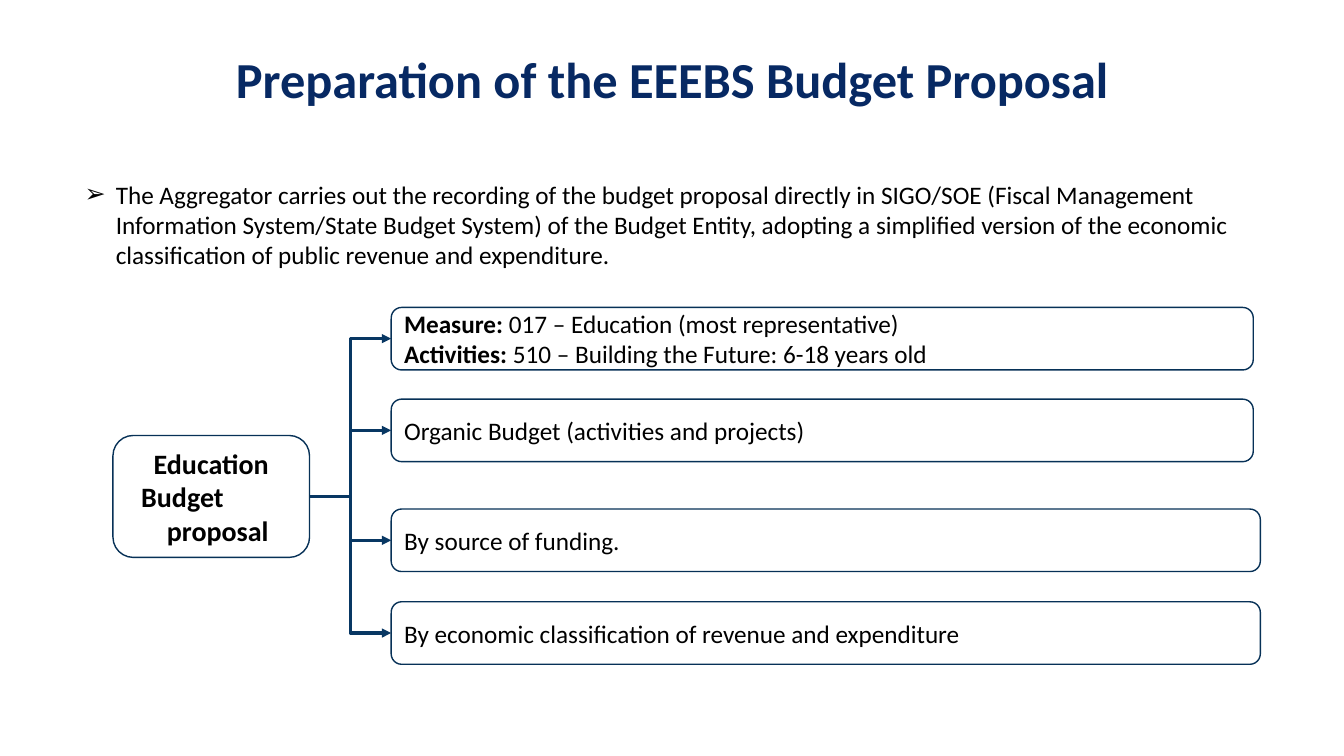
import pptx
import pptx.util
import pptx.dml.color
import pptx.enum.shapes
import pptx.enum.text
import pptx.oxml
import pptx.oxml.ns

Inches = pptx.util.Inches
ALIGN = pptx.enum.text.PP_ALIGN
ANCHOR = pptx.enum.text.MSO_ANCHOR

THEME = {
    "font": "Calibri",
    "title": {"size": 36, "color": "072963"},
    "body": {"size": 18, "color": "000000"},
    "root": {"size": 20, "color": "000000"},
    "outline": "073157",
    "connector": "083763",
}

TITLE = "Preparation of the EEEBS Budget Proposal"
INTRODUCTION = (
    "The Aggregator carries out the recording of the budget proposal directly in "
    "SIGO/SOE (Fiscal Management Information System/State Budget System) of the "
    "Budget Entity, adopting a simplified version of the economic classification "
    "of public revenue and expenditure."
)
ROOT_LINES = [
    ("Education", {"marL": 0, "marR": 0}),
    ("Budget", {"marL": 0, "marR": 0.57}),
    ("proposal", {"marL": 0.13, "marR": 0}),
]
BRANCHES = [
    (3.05, 8.55, [
        [("Measure: ", True), ("017 – Education (most representative)", False)],
        [("Activities: ", True), ("510 – Building the Future: 6-18\u00a0years old", False)],
    ]),
    (3.96, 8.55, [[("Organic Budget (activities and projects)", False)]]),
    (5.05, 8.62, [[("By source of funding.", False)]]),
    (5.97, 8.62, [[("By economic classification of revenue and expenditure", False)]]),
]
BRANCH_LEFT, BRANCH_HEIGHT = 3.88, 0.62


def color(value):
    return pptx.dml.color.RGBColor.from_string(value)


def apply_format(target, values):
    for name, value in values.items():
        setattr(target, name, value)


def add_element(parent, tag, **attributes):
    element = pptx.oxml.parse_xml(f"<a:{tag} {pptx.oxml.ns.nsdecls('a')}/>")
    for name, value in attributes.items():
        element.set(name, value)
    parent.append(element)


def set_margins(paragraph, margins):
    properties = paragraph._p.get_or_add_pPr()
    for name, margin in margins.items():
        properties.set(name, str(Inches(margin)))
    return properties


def write_text(shape, paragraphs, style, frame_format, paragraph_format):
    frame = shape.text_frame
    apply_format(frame, {"word_wrap": True, **frame_format})
    for index, runs in enumerate(paragraphs):
        paragraph = frame.add_paragraph() if index else frame.paragraphs[0]
        apply_format(paragraph, paragraph_format)
        for text, bold in runs:
            run = paragraph.add_run()
            run.text = text
            apply_format(run.font, {
                "name": THEME["font"],
                "size": pptx.util.Pt(THEME[style]["size"]),
                "bold": bold,
            })
            run.font.color.rgb = color(THEME[style]["color"])
    return frame.paragraphs


def add_text_box(slide, bounds):
    return slide.shapes.add_textbox(*map(Inches, bounds))


def add_node(slide, bounds):
    shape = slide.shapes.add_shape(
        pptx.enum.shapes.MSO_SHAPE.ROUNDED_RECTANGLE, *map(Inches, bounds))
    shape.shadow.inherit = False
    shape.fill.background()
    shape.line.color.rgb = color(THEME["outline"])
    shape.line.width = pptx.util.Pt(1)
    return shape


def connect(slide, start, end):
    connector = slide.shapes.add_connector(
        pptx.enum.shapes.MSO_CONNECTOR.ELBOW, 0, 0, 0, 0)
    connector.begin_connect(start, 3)
    connector.end_connect(end, 1)
    connector.line.color.rgb = color(THEME["connector"])
    connector.line.width = pptx.util.Pt(2.25)
    add_element(connector.line._get_or_add_ln(), "tailEnd", type="triangle")
    add_element(connector._element.spPr, "effectLst")


def main():
    presentation = pptx.Presentation()
    apply_format(presentation, {
        "slide_width": Inches(13.33), "slide_height": Inches(7.5)})
    slide = presentation.slides.add_slide(presentation.slide_layouts[6])

    write_text(add_text_box(slide, (0.92, 0.31, 11.5, 1.02)), [[(TITLE, True)]], "title",
               {"vertical_anchor": ANCHOR.MIDDLE},
               {"alignment": ALIGN.CENTER, "line_spacing": 0.9})

    introduction = write_text(
        add_text_box(slide, (0.74, 1.73, 11.86, 1.1)), [[(INTRODUCTION, False)]], "body",
        {"vertical_anchor": ANCHOR.TOP}, {"alignment": ALIGN.LEFT})[0]
    properties = set_margins(introduction, {"marL": 0.31, "indent": -0.31})
    add_element(properties, "buFont", typeface=THEME["font"])
    add_element(properties, "buChar", char="➢")

    root = add_node(slide, (1.12, 4.32, 1.95, 1.21))
    root_paragraphs = write_text(
        root, [[(text, True)] for text, margins in ROOT_LINES], "root",
        {"vertical_anchor": ANCHOR.MIDDLE}, {"alignment": ALIGN.CENTER})
    for paragraph, (text, margins) in zip(root_paragraphs, ROOT_LINES):
        set_margins(paragraph, margins)

    branches = []
    for top, width, paragraphs in BRANCHES:
        branch = add_node(slide, (BRANCH_LEFT, top, width, BRANCH_HEIGHT))
        write_text(branch, paragraphs, "body",
                   {"vertical_anchor": ANCHOR.MIDDLE}, {"alignment": ALIGN.LEFT})
        branches.append(branch)
    for branch in branches:
        connect(slide, root, branch)

    presentation.save("out.pptx")


if __name__ == "__main__":
    main()
